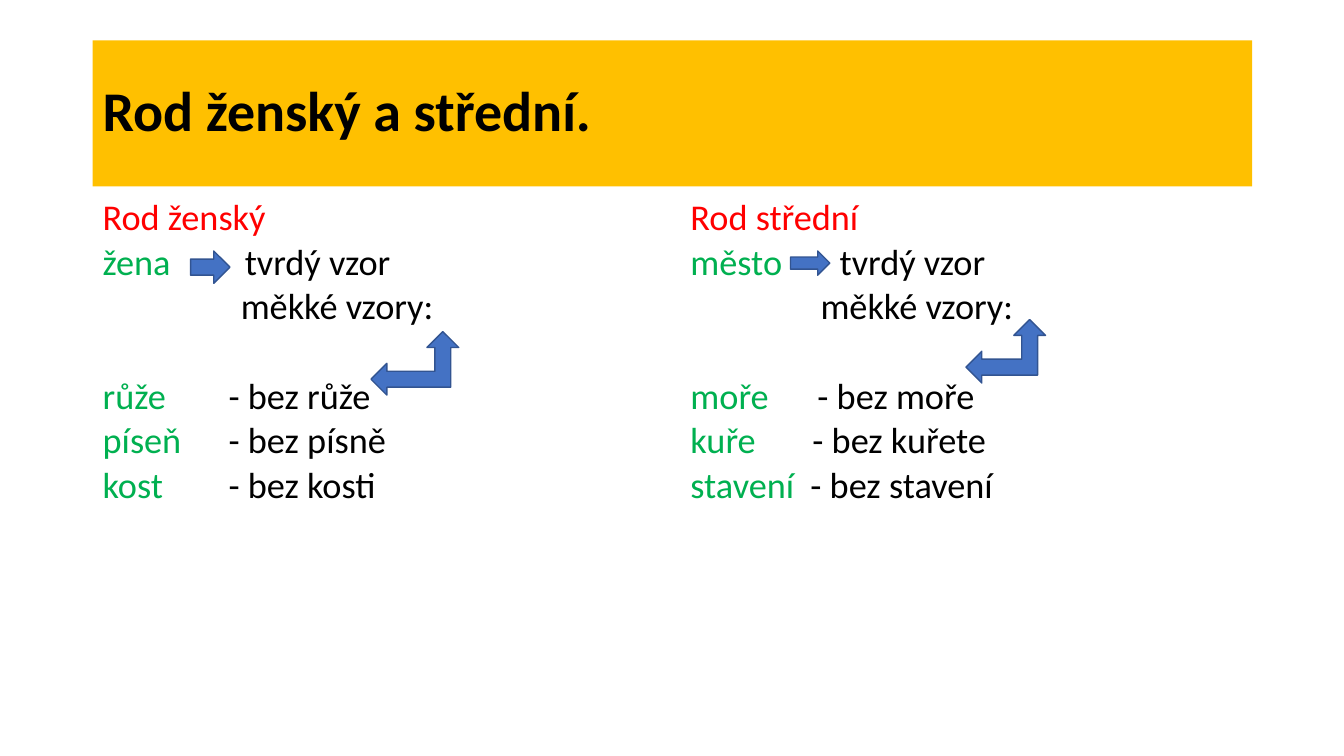
from lxml import etree
from pptx import Presentation
from pptx.dml.color import RGBColor
from pptx.enum.shapes import MSO_SHAPE
from pptx.enum.text import MSO_ANCHOR, PP_ALIGN
from pptx.oxml.ns import qn
from pptx.util import Inches, Pt

RECT, RIGHT, BEND = MSO_SHAPE.RECTANGLE, MSO_SHAPE.RIGHT_ARROW, MSO_SHAPE.LEFT_UP_ARROW
MIDDLE, TOP, LEFT = MSO_ANCHOR.MIDDLE, MSO_ANCHOR.TOP, PP_ALIGN.LEFT
BLACK, RED, GREEN = "000000", "FF0000", "00B050"
GOLD, BLUE, NAVY = "FFC000", "4472C4", "325491"

# Content: each row is green word, black text, tab stop in inches
TITLE = "Rod ženský a střední."
COLUMNS = [
    (0.92, "Rod ženský", [
        ("žena", "tvrdý vzor", 1.41),
        ("", "měkké vzory:", 1.37),
        ("růže", "- bez růže", 1.25),
        ("píseň", "- bez písně", 1.25),
        ("kost", "- bez kosti", 1.25)]),
    (6.75, "Rod střední", [
        ("město", "tvrdý vzor", 1.48),
        ("", "měkké vzory:", 1.29),
        ("moře", "- bez moře", 1.26),
        ("kuře", "- bez kuřete", 1.21),
        ("stavení", "- bez stavení", 1.19)]),
]
ARROWS = [
    (RIGHT, 1.89, 2.49, 0.39, 0.32),
    (BEND, 3.68, 3.29, 0.87, 0.63),
    (RIGHT, 7.84, 2.49, 0.39, 0.24),
    (BEND, 9.58, 3.17, 0.79, 0.63),
]
SIZE, GAP, BREAK = 25.9, 10, 42  # points; BREAK opens the list of soft patterns


def color(code):
    return RGBColor.from_string(code)


def add_shape(slide, kind, box, fill, line=None):
    shape = slide.shapes.add_shape(kind, *map(Inches, box))
    shape.shadow.inherit = False
    shape.fill.solid()
    shape.fill.fore_color.rgb = color(fill)
    if line:
        shape.line.color.rgb = color(line)
        shape.line.width = Pt(1)
    else:
        shape.line.fill.background()
    return shape


def add_text(para, text, size=SIZE, ink=BLACK, bold=False):
    run = para.add_run()
    run.text = text
    font = run.font
    font.name, font.size, font.bold = "Calibri", Pt(size), bold
    font.color.rgb = color(ink)


def set_para(para, space, before=0, tab=None):
    para.alignment = LEFT
    para.line_spacing = space
    para.space_before = Pt(before)
    if tab:
        stops = etree.SubElement(para._p.get_or_add_pPr(), qn("a:tabLst"))
        etree.SubElement(stops, qn("a:tab"), pos=str(Inches(tab)), algn="l")


def add_column(slide, left, head, rows):
    frame = slide.shapes.add_textbox(*map(Inches, (left, 2, 5.67, 4.76))).text_frame
    frame.word_wrap = True
    frame.vertical_anchor = TOP
    para = frame.paragraphs[0]
    set_para(para, 0.7, GAP)
    add_text(para, head, ink=RED)
    for i, (word, rest, tab) in enumerate(rows):
        para = frame.add_paragraph()
        set_para(para, 0.7, BREAK if i == 2 else GAP, tab)
        if word:
            add_text(para, word, ink=GREEN)
        add_text(para, "\t" + rest)


def main():
    deck = Presentation()
    deck.slide_width, deck.slide_height = Inches(13.33), Inches(7.5)
    slide = deck.slides.add_slide(deck.slide_layouts[6])

    # Title band
    frame = add_shape(slide, RECT, (0.92, 0.4, 11.5, 1.45), GOLD).text_frame
    frame.word_wrap = True
    frame.vertical_anchor = MIDDLE
    set_para(frame.paragraphs[0], 0.9)
    add_text(frame.paragraphs[0], TITLE, size=40, bold=True)

    # Two columns, then the arrows over them
    for column in COLUMNS:
        add_column(slide, *column)
    for kind, *box in ARROWS:
        add_shape(slide, kind, box, BLUE, NAVY)

    deck.save("out.pptx")


if __name__ == "__main__":
    main()
